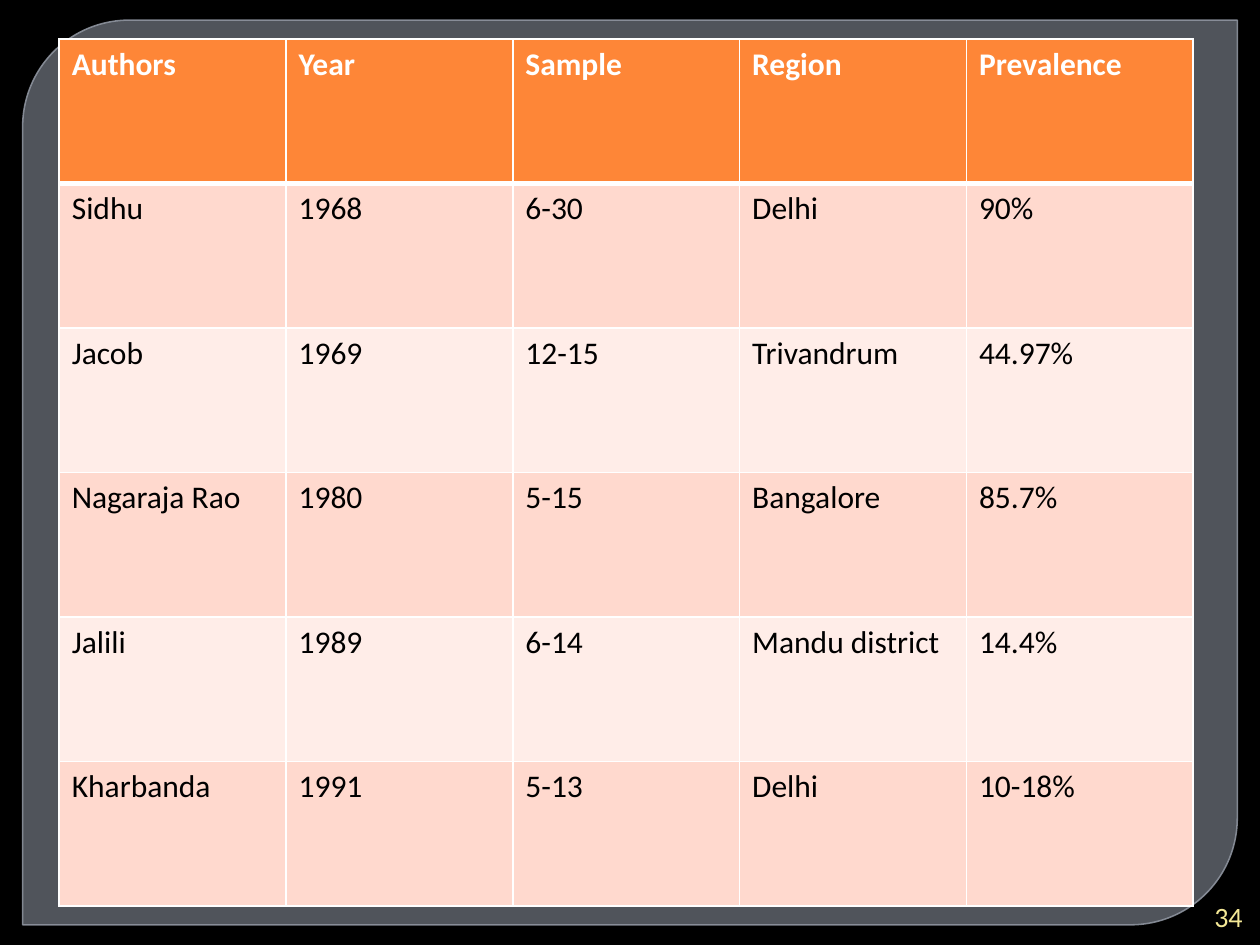
from typing import NamedTuple

from lxml import etree
from pptx import Presentation
from pptx.dml.color import RGBColor
from pptx.enum.shapes import MSO_SHAPE
from pptx.enum.text import MSO_ANCHOR, PP_ALIGN
from pptx.oxml.ns import qn
from pptx.util import Inches, Pt

BLANK_LAYOUT = 6
PANEL_SHAPE = MSO_SHAPE.ROUND_2_DIAG_RECTANGLE
MIDDLE = MSO_ANCHOR.MIDDLE
RIGHT = PP_ALIGN.RIGHT

BLACK = RGBColor(0x00, 0x00, 0x00)
WHITE = RGBColor(0xFF, 0xFF, 0xFF)
PANEL_GREY = RGBColor(0x7C, 0x82, 0x8D)
OUTLINE_GREY = RGBColor(0x90, 0x96, 0xA1)
ORANGE = RGBColor(0xFE, 0x86, 0x37)
DARK_BAND = RGBColor(0xFF, 0xD9, 0xCE)
LIGHT_BAND = RGBColor(0xFF, 0xED, 0xE8)
PALE_YELLOW = RGBColor(0xF4, 0xE8, 0x96)

FONT = "Calibri"
THIN, THICK = Pt(1), Pt(3)


class Study(NamedTuple):
    author: str
    year: str
    sample: str
    region: str
    prevalence: str


class RowStyle(NamedTuple):
    fill: RGBColor
    color: RGBColor
    bold: bool
    top: int
    bottom: int


HEADER = Study("Authors", "Year", "Sample", "Region", "Prevalence")
STUDIES = [
    Study("Sidhu", "1968", "6-30", "Delhi", "90%"),
    Study("Jacob", "1969", "12-15", "Trivandrum", "44.97%"),
    Study("Nagaraja Rao", "1980", "5-15", "Bangalore", "85.7%"),
    Study("Jalili", "1989", "6-14", "Mandu district", "14.4%"),
    Study("Kharbanda", "1991", "5-13", "Delhi", "10-18%"),
]


def set_opacity(fill_parent, percent: int) -> None:
    color = fill_parent.find(qn("a:solidFill"))[0]
    etree.SubElement(color, qn("a:alpha"), val=str(percent * 1000))


def add_run(paragraph, text: str, size: int, color: RGBColor, bold: bool = False) -> None:
    run = paragraph.add_run()
    run.text = text
    run.font.name = FONT
    run.font.size = Pt(size)
    run.font.bold = bold
    run.font.color.rgb = color


def set_borders(cell, top: int, bottom: int) -> None:
    properties = cell._tc.get_or_add_tcPr()
    sides = [("a:lnL", THIN), ("a:lnR", THIN), ("a:lnT", top), ("a:lnB", bottom)]
    for position, (tag, width) in enumerate(sides):
        line = etree.Element(qn(tag), w=str(int(width)))
        fill = etree.SubElement(line, qn("a:solidFill"))
        etree.SubElement(fill, qn("a:srgbClr"), val=str(WHITE))
        properties.insert(position, line)


def row_style(index: int) -> RowStyle:
    if index == 0:
        return RowStyle(ORANGE, WHITE, True, THIN, THICK)
    band = DARK_BAND if index % 2 else LIGHT_BAND
    return RowStyle(band, BLACK, False, THICK if index == 1 else THIN, THIN)


def add_panel(slide) -> None:
    panel = slide.shapes.add_shape(
        PANEL_SHAPE, Inches(0.18), Inches(0.16), Inches(9.64), Inches(7.18))
    panel.adjustments[0] = 0.118
    panel.adjustments[1] = 0
    panel.shadow.inherit = False
    panel.fill.solid()
    panel.fill.fore_color.rgb = PANEL_GREY
    panel.line.color.rgb = OUTLINE_GREY
    panel.line.width = Pt(0.87)
    set_opacity(panel._element.spPr, 65)
    set_opacity(panel.line._ln, 88)


def add_study_table(slide) -> None:
    rows = [HEADER, *STUDIES]
    table = slide.shapes.add_table(
        len(rows), len(HEADER), Inches(0.47), Inches(0.31), Inches(9), Inches(6.88)).table
    for row_index, study in enumerate(rows):
        style = row_style(row_index)
        for column_index, text in enumerate(study):
            cell = table.cell(row_index, column_index)
            cell.fill.solid()
            cell.fill.fore_color.rgb = style.fill
            set_borders(cell, style.top, style.bottom)
            add_run(cell.text_frame.paragraphs[0], text, 18, style.color, style.bold)


def add_page_number(slide, number: str) -> None:
    box = slide.shapes.add_textbox(Inches(9.45), Inches(7.12), Inches(0.51), Inches(0.3))
    frame = box.text_frame
    frame.word_wrap = True
    frame.vertical_anchor = MIDDLE
    paragraph = frame.paragraphs[0]
    paragraph.alignment = RIGHT
    add_run(paragraph, number, 16, PALE_YELLOW)


def main() -> None:
    presentation = Presentation()
    presentation.slide_width = Inches(10)
    presentation.slide_height = Inches(7.5)
    slide = presentation.slides.add_slide(presentation.slide_layouts[BLANK_LAYOUT])

    # Background and panel
    slide.background.fill.solid()
    slide.background.fill.fore_color.rgb = BLACK
    add_panel(slide)

    # Prevalence studies and page number
    add_study_table(slide)
    add_page_number(slide, "34")

    presentation.save("out.pptx")


if __name__ == "__main__":
    main()
